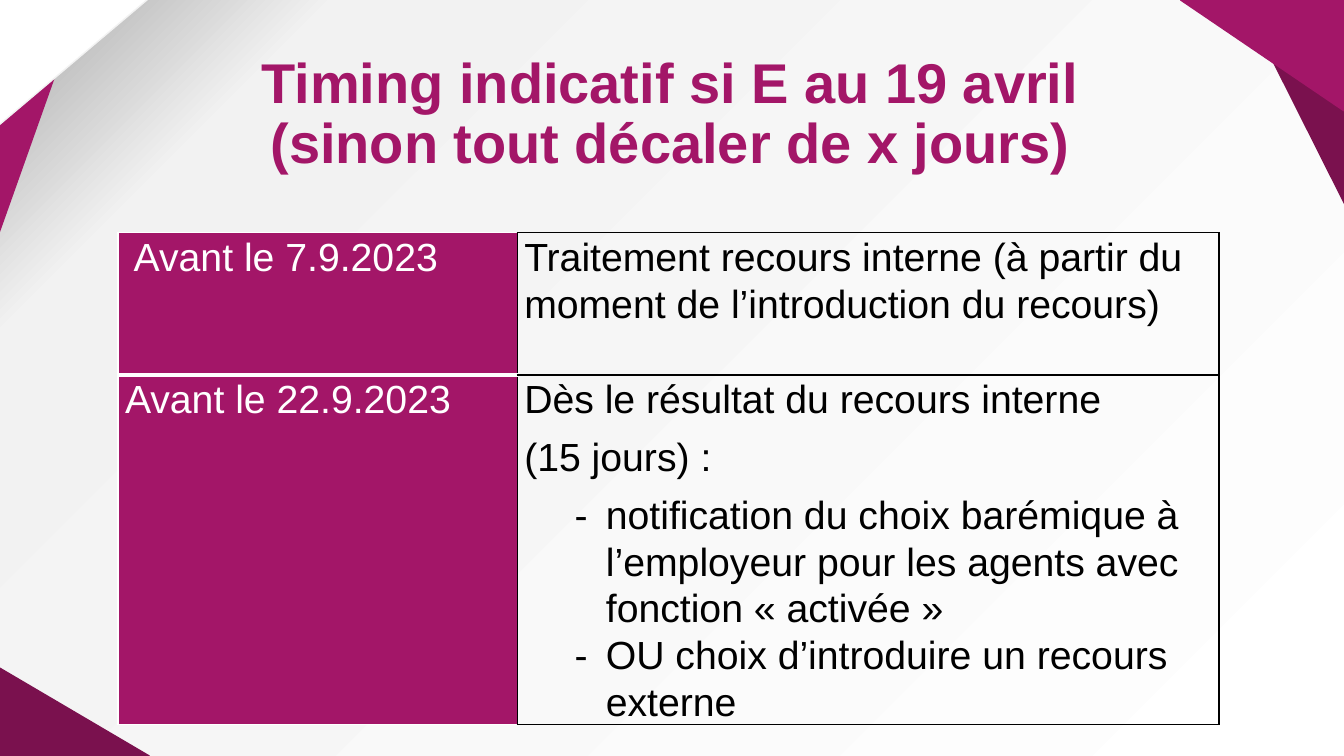
from dataclasses import dataclass

from lxml import etree
from pptx import Presentation
from pptx.dml.color import RGBColor
from pptx.enum.shapes import MSO_SHAPE
from pptx.enum.text import MSO_ANCHOR, MSO_AUTO_SIZE, PP_ALIGN
from pptx.oxml.ns import qn
from pptx.util import Inches, Pt

TRIANGLE = MSO_SHAPE.RIGHT_TRIANGLE
MIDDLE = MSO_ANCHOR.MIDDLE
NO_AUTOFIT = MSO_AUTO_SIZE.NONE
CENTER = PP_ALIGN.CENTER


@dataclass(frozen=True)
class Theme:
    font: str = "Arial"
    magenta: str = "A31668"
    plum: str = "7A114E"
    white: str = "FFFFFF"
    pale: str = "F2F2F2"
    grey: str = "A6A6A6"
    black: str = "000000"
    title_size: int = 40
    table_size: int = 28


THEME = Theme()

TITLE = "Timing indicatif si E au 19 avril\v(sinon tout décaler de x jours)"
TITLE_BOX = (1.01, 0.42, 11.27, 1.45)

SCHEDULE = [
    (" Avant le 7.9.2023",
     ["Traitement recours interne (à partir du moment de l’introduction du recours)"],
     []),
    ("Avant le 22.9.2023",
     ["Dès le résultat du recours interne", "(15 jours)\u00a0:"],
     ["notification du choix barémique à l’employeur pour les agents avec "
      "fonction «\u00a0activée\u00a0»",
      "OU choix d’introduire un recours externe"]),
]
TABLE_ORIGIN = (1.17, 2.31)
COLUMN_WIDTHS = (3.96, 6.96)
ROW_HEIGHTS = (1.41, 3.46)

CORNERS = [
    ((-0.01, 0, 0.82, 2.31), 0, True, THEME.magenta, THEME.magenta),
    ((0, 6.63, 1.48, 0.87), 0, False, THEME.plum, THEME.plum),
    ((0.1, -0.13, 1.26, 1.49), 90, False, THEME.white, THEME.pale),
    ((12.32, 0, 1.02, 2.03), 180, False, THEME.plum, THEME.plum),
    ((11.71, 0, 1.62, 1.1), 180, False, THEME.magenta, THEME.magenta),
]
BACKGROUND_STOPS = [(0, THEME.grey), (16, THEME.pale), (100, THEME.white)]


def add_element(parent, tag, **attributes):
    element = etree.SubElement(parent, qn(tag))
    for name, value in attributes.items():
        element.set(name, str(value))
    return element


def paint_background(slide):
    fill = slide.background.fill
    fill.gradient()
    gradient = slide._element.find(".//" + qn("a:gradFill"))
    for child in list(gradient):
        gradient.remove(child)
    stops = add_element(gradient, "a:gsLst")
    for percent, color in BACKGROUND_STOPS:
        stop = add_element(stops, "a:gs", pos=percent * 1000)
        add_element(stop, "a:srgbClr", val=color)
    add_element(gradient, "a:lin", ang=45 * 60000, scaled=0)


def add_corner(slide, frame, rotation, flipped, color, outline):
    corner = slide.shapes.add_shape(TRIANGLE, *map(Inches, frame))
    corner.shadow.inherit = False
    corner.rotation = rotation
    if flipped:
        corner._element.spPr.find(qn("a:xfrm")).set("flipV", "1")
    corner.fill.solid()
    corner.fill.fore_color.rgb = RGBColor.from_string(color)
    corner.line.color.rgb = RGBColor.from_string(outline)
    corner.line.width = Pt(1)


def write(para, text, *, size, color, bold=False, align=None, spacing=1.07, after=0, bullet=None):
    para.alignment = align
    para.line_spacing = spacing
    para.space_before = Pt(0)
    para.space_after = Pt(after)
    if bullet:
        para.level = 1
        properties = para._p.get_or_add_pPr()
        properties.set("marL", str(Inches(0.81)))
        properties.set("indent", str(Inches(-0.31)))
        add_element(properties, "a:buFont", typeface=THEME.font)
        add_element(properties, "a:buChar", char=bullet)
    para.text = text
    for span in para.runs:
        span.font.name = THEME.font
        span.font.size = Pt(size)
        span.font.bold = bold
        span.font.color.rgb = RGBColor.from_string(color)


def set_borders(cell, **sides):
    properties = cell._tc.get_or_add_tcPr()
    for side in "LRTB":
        color, width = sides[side]
        line = add_element(properties, f"a:ln{side}", w=Pt(width))
        add_element(add_element(line, "a:solidFill"), "a:srgbClr", val=color)


def fill_cell(cell, lines, bullets, color):
    cell.margin_left = cell.margin_right = Inches(0.07)
    cell.margin_top = cell.margin_bottom = 0
    entries = [(line, None) for line in lines] + [(line, "-") for line in bullets]
    for index, (text, bullet) in enumerate(entries):
        para = cell.text_frame.paragraphs[0] if index == 0 else cell.text_frame.add_paragraph()
        last = index == len(entries) - 1
        write(para, text, size=THEME.table_size, color=color, bullet=bullet,
              after=0 if bullet and not last else 8)


def add_schedule(slide):
    size = (sum(COLUMN_WIDTHS), sum(ROW_HEIGHTS))
    frame = slide.shapes.add_table(len(SCHEDULE), len(COLUMN_WIDTHS),
                                   *map(Inches, TABLE_ORIGIN + size))
    table = frame.table
    table.first_row = table.horz_banding = False
    for column, width in zip(table.columns, COLUMN_WIDTHS):
        column.width = Inches(width)
    white, black = (THEME.white, 1), (THEME.black, 1)
    for index, (date, lines, bullets) in enumerate(SCHEDULE):
        table.rows[index].height = Inches(ROW_HEIGHTS[index])
        date_cell, task_cell = table.cell(index, 0), table.cell(index, 1)
        divider = (THEME.white, 3)
        set_borders(date_cell, L=white, R=black,
                    T=divider if index else white,
                    B=white if index else divider)
        date_cell.fill.solid()
        date_cell.fill.fore_color.rgb = RGBColor.from_string(THEME.magenta)
        fill_cell(date_cell, [date], [], THEME.white)
        set_borders(task_cell, L=black, R=black, T=black, B=black)
        task_cell.fill.background()
        fill_cell(task_cell, lines, bullets, THEME.black)


def add_title(slide):
    title = slide.shapes.title
    title.left, title.top, title.width, title.height = map(Inches, TITLE_BOX)
    title.text_frame.auto_size = NO_AUTOFIT
    title.text_frame.vertical_anchor = MIDDLE
    write(title.text_frame.paragraphs[0], TITLE, size=THEME.title_size,
          color=THEME.magenta, bold=True, align=CENTER, spacing=0.9)
    slide.shapes._spTree.append(title._element)


def main():
    deck = Presentation()
    deck.slide_width, deck.slide_height = Inches(13.33), Inches(7.5)
    page = deck.slides.add_slide(deck.slide_layouts[5])
    paint_background(page)
    for corner in CORNERS:
        add_corner(page, *corner)
    add_title(page)
    add_schedule(page)
    deck.save("out.pptx")


if __name__ == "__main__":
    main()
